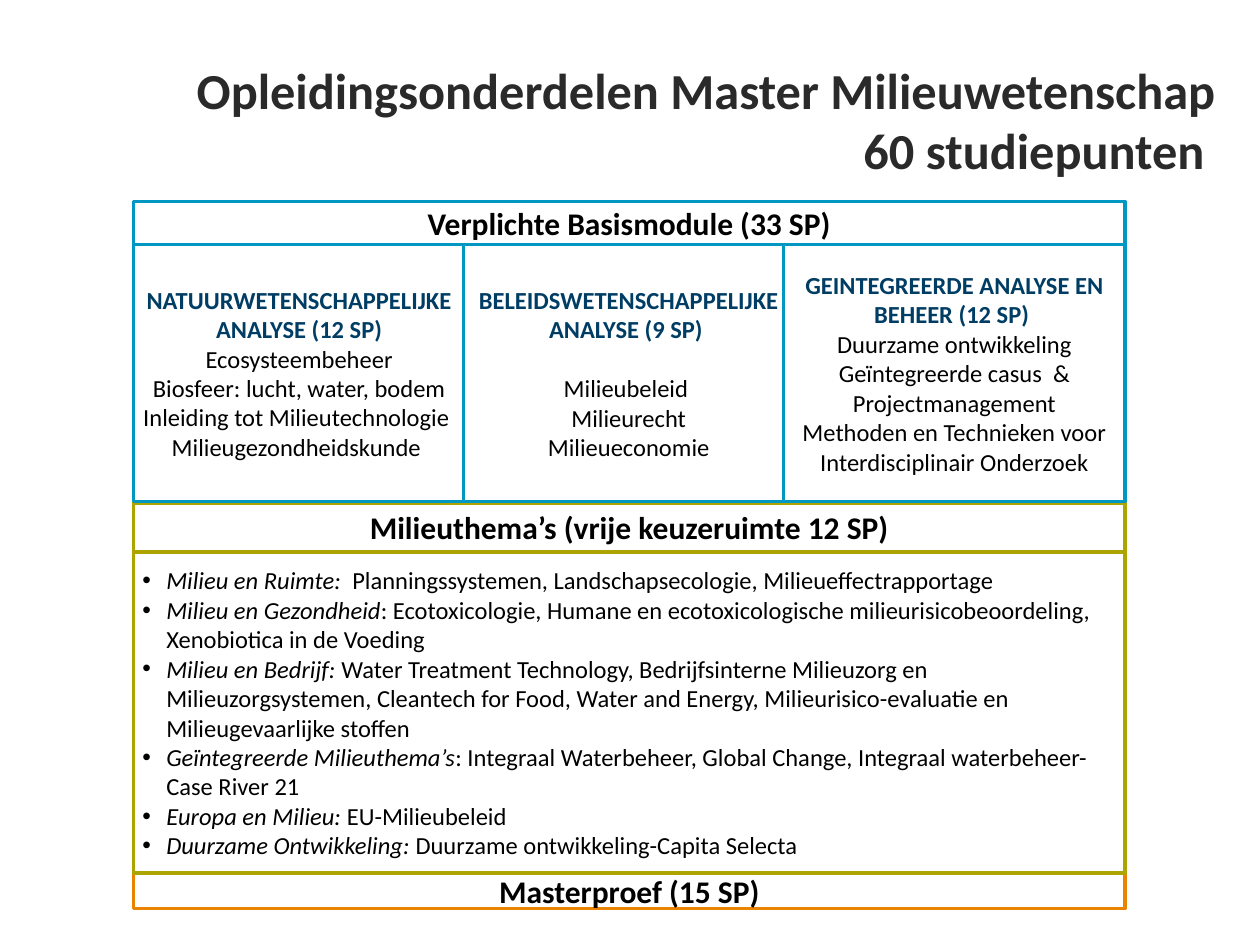
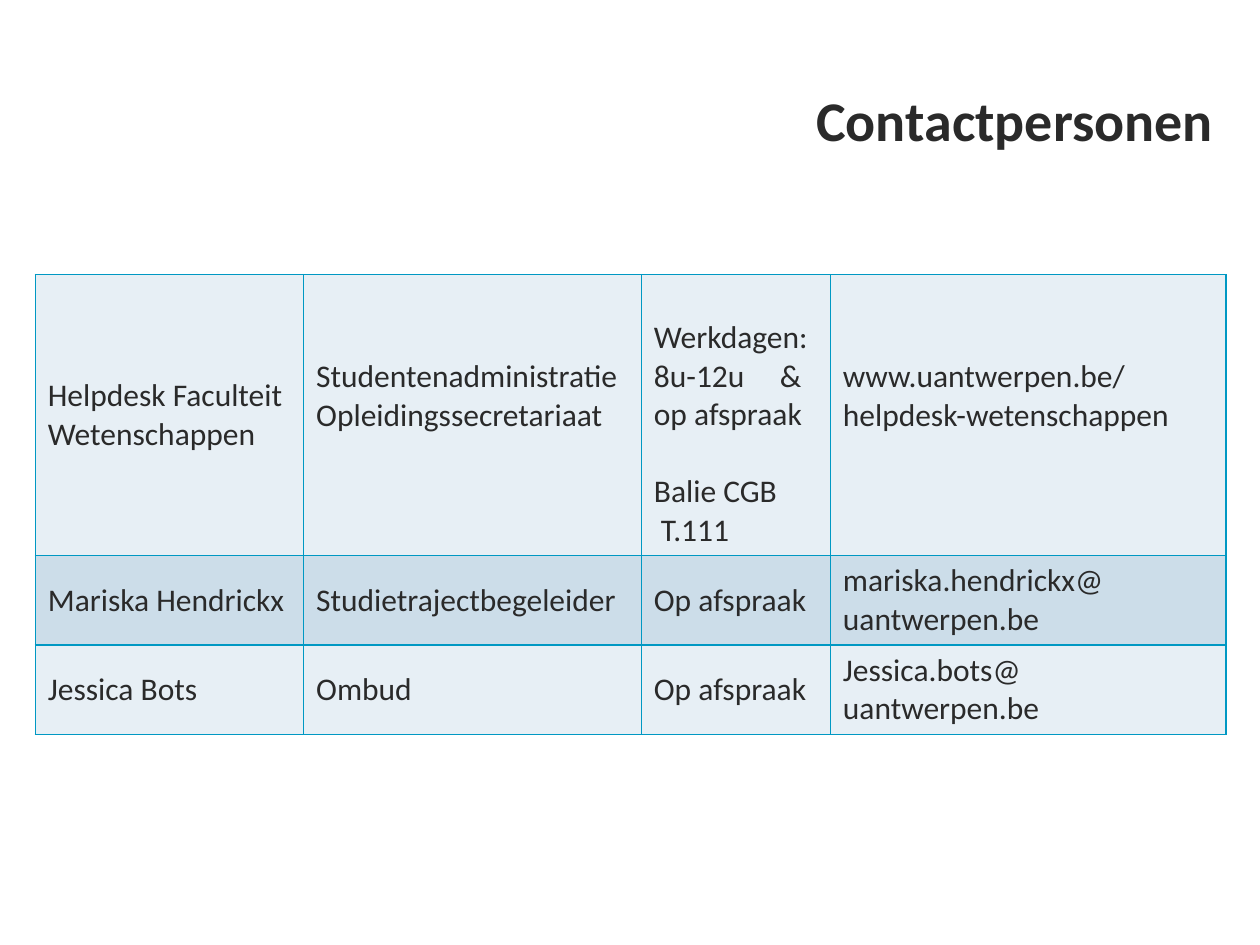
"""Builds two slides: the modules of the master programme and its contact persons."""
from lxml import etree
from pptx import Presentation
from pptx.dml.color import RGBColor
from pptx.enum.shapes import MSO_SHAPE
from pptx.enum.text import MSO_ANCHOR, PP_ALIGN
from pptx.oxml.ns import qn
from pptx.util import Inches, Pt

RECT = MSO_SHAPE.RECTANGLE
MIDDLE = MSO_ANCHOR.MIDDLE
LEFT, CENTER, RIGHT = PP_ALIGN.LEFT, PP_ALIGN.CENTER, PP_ALIGN.RIGHT

FONT = "Calibri"
COLORS = {
    "white": "FFFFFF", "black": "000000", "title": "2A2A2A", "heading": "003D64",
    "blue": "0098C3", "green": "AEA400", "orange": "E98300",
    "light": "E7EFF5", "mid": "CCDDE9",
}

PROGRAMME_TITLE = "Opleidingsonderdelen Master Milieuwetenschap\n60 studiepunten "
GRID_LEFT, GRID_WIDTH = 1.06, 7.87
BANDS = [
    ("Milieuthema’s (vrije keuzeruimte 12 SP)", 3.99, 0.39, "green"),
    ("Masterproef (15 SP)", 6.93, 0.28, "orange"),
    ("Verplichte Basismodule (33 SP)", 1.6, 0.34, "blue"),
]
THEMES_TOP, THEMES_HEIGHT = 4.38, 2.55
THEMES = [
    ("Milieu en Ruimte:  ", "Planningssystemen, Landschapsecologie, Milieueffectrapportage"),
    ("Milieu en Gezondheid", ": Ecotoxicologie, Humane en ecotoxicologische "
     "milieurisicobeoordeling, Xenobiotica in de Voeding"),
    ("Milieu en Bedrijf: ", "Water Treatment Technology, Bedrijfsinterne Milieuzorg en "
     "Milieuzorgsystemen, Cleantech for Food, Water and Energy, Milieurisico-evaluatie en "
     "Milieugevaarlijke stoffen"),
    ("Geïntegreerde Milieuthema’s", ": Integraal Waterbeheer, Global Change, "
     "Integraal waterbeheer-Case River 21"),
    ("Europa en Milieu: ", "EU-Milieubeleid"),
    ("Duurzame Ontwikkeling: ", "Duurzame ontwikkeling-Capita Selecta"),
]
MODULES_TOP, MODULES_HEIGHT = 1.94, 2.04
MODULES = [
    {"left": 1.06, "width": 2.63, "gap": 0,
     "heading": "NATUURWETENSCHAPPELIJKE ANALYSE (12 SP)",
     "courses": ["Ecosysteembeheer",
                 "Biosfeer: lucht, water, bodem Inleiding tot Milieutechnologie ",
                 "Milieugezondheidskunde "]},
    {"left": 3.68, "width": 2.62, "gap": 17,
     "heading": "BELEIDSWETENSCHAPPELIJKE ANALYSE (9 SP) ",
     "courses": ["Milieubeleid ", "Milieurecht", "Milieueconomie"]},
    {"left": 6.22, "width": 2.71, "gap": 0,
     "heading": "GEINTEGREERDE ANALYSE EN BEHEER (12 SP) ",
     "courses": ["Duurzame ontwikkeling", "Geïntegreerde casus  & Projectmanagement",
                 "Methoden en Technieken voor Interdisciplinair Onderzoek"]},
]

CONTACT_TITLE = "Contactpersonen"
CONTACT_COLS = [2.13, 2.68, 1.5, 3.14]
CONTACT_ROWS = [2.23, 0.71, 0.71]
CONTACTS = [
    [["Helpdesk Faculteit Wetenschappen"],
     ["Studentenadministratie", "Opleidingssecretariaat"],
     ["Werkdagen:", "8u-12u\t&", "op afspraak", "Balie CGB", " T.111"],
     ["www.uantwerpen.be/", "helpdesk-wetenschappen"]],
    [["Mariska Hendrickx"], ["Studietrajectbegeleider"], ["Op afspraak"],
     ["mariska.hendrickx@", "uantwerpen.be"]],
    [["Jessica Bots"], ["Ombud"], ["Op afspraak"],
     ["Jessica.bots@", "uantwerpen.be"]],
]
SPACE_BEFORE = {"Balie CGB": 22}
HELPDESK_SHIFT = 0.35


def rgb(name):
    return RGBColor.from_string(COLORS[name])


def write(tf, text, size=14, color="black", bold=False, align=LEFT, before=0,
          lead="", bullet=False):
    p = tf.paragraphs[0]
    if p.runs:
        p = tf.add_paragraph()
    if bullet:
        pPr = p._p.get_or_add_pPr()
        pPr.set("marL", str(Inches(0.19)))
        pPr.set("indent", str(-Inches(0.19)))
        etree.SubElement(pPr, qn("a:buFont"), typeface="Arial")
        etree.SubElement(pPr, qn("a:buChar"), char="•")
    p.alignment = align
    if before:
        p.space_before = Pt(before)
    for part, italic in ((lead, True), (text, False)):
        for i, line in enumerate(part.split("\n")):
            if i:
                p.add_line_break()
            if line:
                r = p.add_run()
                r.text = line
                r.font.name, r.font.size = FONT, Pt(size)
                r.font.bold, r.font.italic = bold, italic
                r.font.color.rgb = rgb(color)


def add_title(s, text, left, width, size):
    tf = s.shapes.add_textbox(Inches(left), Inches(0.6), Inches(width), Inches(0.69)).text_frame
    tf.word_wrap, tf.vertical_anchor = True, MIDDLE
    write(tf, text, size=size, color="title", bold=True, align=RIGHT)


def add_box(s, left, top, width, height, line):
    sp = s.shapes.add_shape(RECT, Inches(left), Inches(top), Inches(width), Inches(height))
    sp.shadow.inherit = False
    sp.fill.solid()
    sp.fill.fore_color.rgb = rgb("white")
    sp.line.color.rgb, sp.line.width = rgb(line), Pt(2)
    tf = sp.text_frame
    tf.word_wrap, tf.vertical_anchor = True, MIDDLE
    tf.margin_left = tf.margin_right = Inches(0.07)
    tf.margin_top = tf.margin_bottom = Inches(0.04)
    return tf


def add_band(s, text, top, height, line):
    tf = add_box(s, GRID_LEFT, top, GRID_WIDTH, height, line)
    write(tf, text, size=18, bold=True, align=CENTER)


def set_borders(cell, color):
    tcPr = cell._tc.get_or_add_tcPr()
    for i, side in enumerate(("lnL", "lnR", "lnT", "lnB")):
        ln = etree.Element(qn("a:" + side), w=str(Pt(1)))
        fill = etree.SubElement(ln, qn("a:solidFill"))
        etree.SubElement(fill, qn("a:srgbClr"), val=COLORS[color])
        tcPr.insert(i, ln)


def build_programme(s):
    add_title(s, PROGRAMME_TITLE, 1.06, 8.69, 28.8)
    *lower_bands, top_band = BANDS
    for band in lower_bands:
        add_band(s, *band)
    tf = add_box(s, GRID_LEFT, THEMES_TOP, GRID_WIDTH, THEMES_HEIGHT, "green")
    for lead, text in THEMES:
        write(tf, text, lead=lead, bullet=True)
    add_band(s, *top_band)
    for module in MODULES:
        tf = add_box(s, module["left"], MODULES_TOP, module["width"], MODULES_HEIGHT, "blue")
        write(tf, module["heading"], color="heading", bold=True, align=CENTER)
        for i, course in enumerate(module["courses"]):
            write(tf, course, align=CENTER, before=0 if i else module["gap"])


def build_contacts(s):
    add_title(s, CONTACT_TITLE, 0.28, 9.45, 32)
    table = s.shapes.add_table(
        len(CONTACT_ROWS), len(CONTACT_COLS), Inches(0.28), Inches(2.18),
        Inches(sum(CONTACT_COLS)), Inches(sum(CONTACT_ROWS))).table
    table.first_row = False
    for column, width in zip(table.columns, CONTACT_COLS):
        column.width = Inches(width)
    for i, (row, height) in enumerate(zip(table.rows, CONTACT_ROWS)):
        row.height = Inches(height)
        for cell, lines in zip(row.cells, CONTACTS[i]):
            cell.vertical_anchor = MIDDLE
            cell.fill.solid()
            cell.fill.fore_color.rgb = rgb("mid" if i % 2 else "light")
            set_borders(cell, "blue")
            for line in lines:
                write(cell.text_frame, line, size=18, color="title",
                      before=SPACE_BEFORE.get(line, 0))
    table.cell(0, 2).margin_top = Inches(HELPDESK_SHIFT)
    for col in (1, 3):
        table.cell(0, col).margin_bottom = Inches(HELPDESK_SHIFT)


def main():
    prs = Presentation()
    prs.slide_width, prs.slide_height = Inches(10), Inches(7.5)
    for build in (build_programme, build_contacts):
        build(prs.slides.add_slide(prs.slide_layouts[6]))
    prs.save("out.pptx")


if __name__ == "__main__":
    main()
